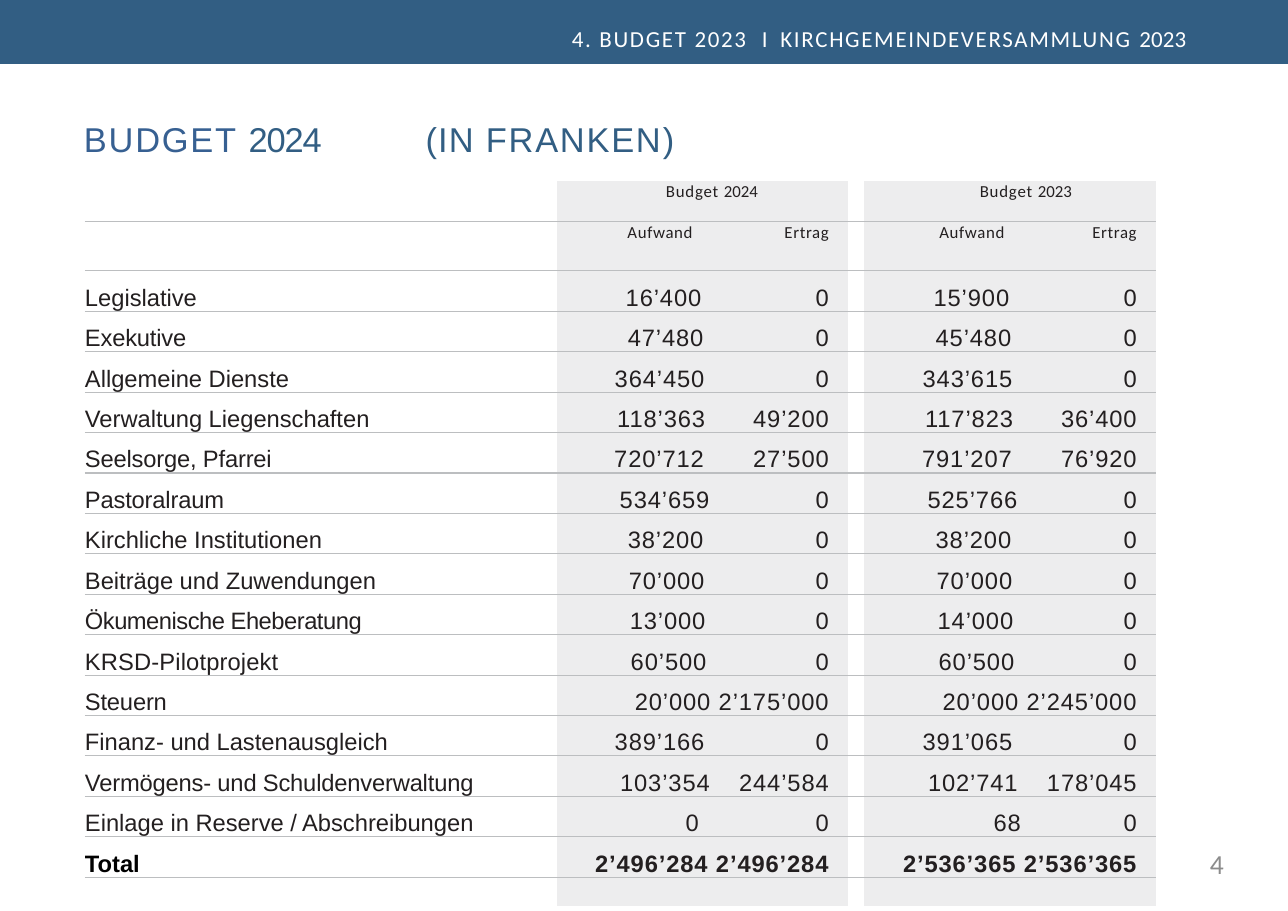
import lxml.etree
import pptx
import pptx.dml.color
import pptx.enum.shapes
import pptx.enum.text
import pptx.oxml.ns
import pptx.util

EMU_PER_PX = 8298
COLORS = {
    "band": "325E83",
    "title": "376092",
    "white": "FFFFFF",
    "text": "231F20",
    "total": "000000",
    "column": "EDEDEE",
    "rule": "BCBEC0",
    "page": "8C8C8C",
}
ALIGN = pptx.enum.text.PP_ALIGN
ANCHOR = pptx.enum.text.MSO_ANCHOR
NO_STYLE = "{2D5ABB26-0587-4C30-8999-92F81FD0307C}"
COLUMN_WIDTHS = [472, 291, 16, 292]
HEADER_HEIGHTS = [41, 49]
BODY_HEIGHT = 607
FOOT_HEIGHT = 29
RIGHT_MARGIN = 19
HEADINGS = [(1, "2024", 109, 157), (3, "2023", 116, 153)]
BUDGET = [
    ("Legislative", 0, 190, "16’400\t0", "15’900\t0"),
    ("Exekutive", -0.1, 188, "47’480\t0", "45’480\t0"),
    ("Allgemeine Dienste", 0, 201, "364’450\t0", "343’615\t0"),
    ("Verwaltung Liegenschaften", 0, 136, "118’363\t49’200", "117’823\t36’400"),
    ("Seelsorge, Pfarrei", -0.1, 139, "720’712\t27’500", "791’207\t76’920"),
    ("Pastoralraum", -0.1, 196, "534’659\t0", "525’766\t0"),
    ("Kirchliche Institutionen", 0, 188, "38’200\t0", "38’200\t0"),
    ("Beiträge und Zuwendungen", 0, 187, "70’000\t0", "70’000\t0"),
    ("Ökumenische Eheberatung", -0.3, 186, "13’000\t0", "14’000\t0"),
    ("KRSD-Pilotprojekt", 0.1, 185, "60’500\t0", "60’500\t0"),
    ("Steuern", -0.1, None, "20’000 2’175’000", "20’000 2’245’000"),
    ("Finanz- und Lastenausgleich", 0, 201, "389’166\t0", "391’065\t0"),
    ("Vermögens- und Schuldenverwaltung", -0.1, 119, "103’354\t244’584", "102’741\t178’045"),
    ("Einlage in Reserve / Abschreibungen", 0, 130, "0\t0", "68\t0"),
    ("Total", 0, None, "2’496’284 2’496’284", "2’536’365 2’536’365"),
]


def px(length):
    return pptx.util.Emu(length * EMU_PER_PX)


def rgb(name):
    return pptx.dml.color.RGBColor.from_string(COLORS[name])


def set_attributes(target, values):
    for name, value in values.items():
        setattr(target, name, value)


def add_child(parent, tag, **attributes):
    child = lxml.etree.SubElement(parent, pptx.oxml.ns.qn(tag))
    for name, value in attributes.items():
        child.set(name, str(value))
    return child


def add_tab(paragraph, position):
    tabs = add_child(paragraph._p.get_or_add_pPr(), "a:tabLst")
    add_child(tabs, "a:tab", pos=px(position), algn="l")


def write(paragraph, runs, color, font, size, align=ALIGN.LEFT, bold=False, tab=None):
    paragraph.alignment = align
    for text, spacing in runs:
        run = paragraph.add_run()
        run.text = text
        set_attributes(run.font, {"name": font, "size": pptx.util.Pt(size), "bold": bold})
        run.font.color.rgb = rgb(color)
        run._r.get_or_add_rPr().set("spc", str(round(spacing * 100)))
    if tab:
        add_tab(paragraph, tab)


def prepare_frame(frame):
    set_attributes(frame, {
        "margin_left": 0, "margin_right": 0, "margin_top": 0, "margin_bottom": 0,
        "word_wrap": True, "vertical_anchor": ANCHOR.TOP,
        "auto_size": pptx.enum.text.MSO_AUTO_SIZE.NONE,
    })
    return frame.paragraphs[0]


def add_text(slide, left, top, width, height, runs, **style):
    box = slide.shapes.add_textbox(px(left), px(top), px(width), px(height))
    write(prepare_frame(box.text_frame), runs, **style)


def add_band(slide, width, height):
    band = slide.shapes.add_shape(
        pptx.enum.shapes.MSO_SHAPE.RECTANGLE, 0, 0, width, px(height))
    band.shadow.inherit = False
    band.fill.solid()
    band.fill.fore_color.rgb = rgb("band")
    band.line.fill.background()


def fill_title(slide):
    title = slide.shapes.title
    set_attributes(title, {"left": px(84), "top": px(118), "width": px(1122), "height": px(42)})
    paragraph = prepare_frame(title.text_frame)
    style = {"font": "Arial", "size": 22.5}
    write(paragraph, [("BUDGET ", 1.1)], "title", **style)
    write(paragraph, [("2024\t ", -0.8), ("(IN ", 0.8), ("FRANKEN", 1.1), (")", 1.4)],
          "band", tab=332, **style)


def add_border(cell, tag):
    properties = cell._tc.get_or_add_tcPr()
    line = add_child(properties, tag, w=pptx.util.Pt(0.88))
    fill = add_child(line, "a:solidFill")
    add_child(fill, "a:srgbClr", val=COLORS["rule"])
    properties.insert(0, line)


def format_cell(cell, row, column, last_row):
    set_attributes(cell, {
        "margin_left": 0, "margin_top": 0, "margin_bottom": 0,
        "margin_right": px(RIGHT_MARGIN) if column in (1, 3) else 0,
        "vertical_anchor": ANCHOR.TOP if row < len(HEADER_HEIGHTS) else ANCHOR.BOTTOM,
    })
    if column in (1, 3):
        cell.fill.solid()
        cell.fill.fore_color.rgb = rgb("column")
    else:
        cell.fill.background()
    if row < last_row:
        add_border(cell, "a:lnB")
    if row > 0:
        add_border(cell, "a:lnT")
    paragraph = cell.text_frame.paragraphs[0]
    if not paragraph.runs:
        add_child(paragraph._p, "a:endParaRPr", sz=800)


def fill_headings(table):
    style = {"color": "text", "font": "Calibri", "size": 11}
    for column, year, indent, tab in HEADINGS:
        paragraph = table.cell(0, column).text_frame.paragraphs[0]
        paragraph._p.get_or_add_pPr().set("marL", str(px(indent)))
        write(paragraph, [("Budget ", 0.5), (year, 0)], **style)
        write(table.cell(1, column).text_frame.paragraphs[0],
              [("Aufwand\tErtrag", 0.4)], align=ALIGN.RIGHT, tab=tab, **style)


def fill_budget(table):
    for row, (label, spacing, tab, current, previous) in enumerate(BUDGET, len(HEADER_HEIGHTS)):
        total = label == "Total"
        style = {"font": "Arial", "size": 15.5, "bold": total}
        write(table.cell(row, 0).text_frame.paragraphs[0], [(label, spacing)],
              "total" if total else "text", **style)
        for column, amounts in ((1, current), (3, previous)):
            write(table.cell(row, column).text_frame.paragraphs[0], [(amounts, 0.6)],
                  "text", align=ALIGN.RIGHT, tab=tab, **style)


def add_budget_table(slide):
    body_row = px(BODY_HEIGHT) // len(BUDGET)
    heights = [px(height) for height in HEADER_HEIGHTS]
    heights += [body_row] * len(BUDGET) + [px(FOOT_HEIGHT)]
    frame = slide.shapes.add_table(
        len(heights), len(COLUMN_WIDTHS), px(85), px(181), px(sum(COLUMN_WIDTHS)), sum(heights))
    table = frame.table
    set_attributes(table, {"first_row": False, "horz_banding": False})
    table._tbl.tblPr.find(pptx.oxml.ns.qn("a:tableStyleId")).text = NO_STYLE
    for column, width in zip(table.columns, COLUMN_WIDTHS):
        column.width = px(width)
    for row, height in zip(table.rows, heights):
        row.height = height
    fill_headings(table)
    fill_budget(table)
    for row in range(len(heights)):
        for column in range(len(COLUMN_WIDTHS)):
            format_cell(table.cell(row, column), row, column, len(heights) - 1)


def main():
    presentation = pptx.Presentation()
    presentation.slide_width = pptx.util.Inches(11.69)
    presentation.slide_height = pptx.util.Inches(8.27)
    slide = presentation.slides.add_slide(presentation.slide_layouts[5])
    add_band(slide, presentation.slide_width, 64)
    add_text(slide, 572, 25, 630, 28,
             [("4. BUDGET 2023  ", 1.1), ("I  ", 0.5),
              ("KIRCHGEMEINDEVERSAMMLUNG ", 1.1), ("2023", 0.1)],
             color="white", font="Calibri", size=15)
    fill_title(slide)
    add_budget_table(slide)
    add_text(slide, 928, 847, 296, 45, [("4", 0)],
             color="page", font="Calibri", size=18, align=ALIGN.RIGHT)
    presentation.save("out.pptx")


if __name__ == "__main__":
    main()
